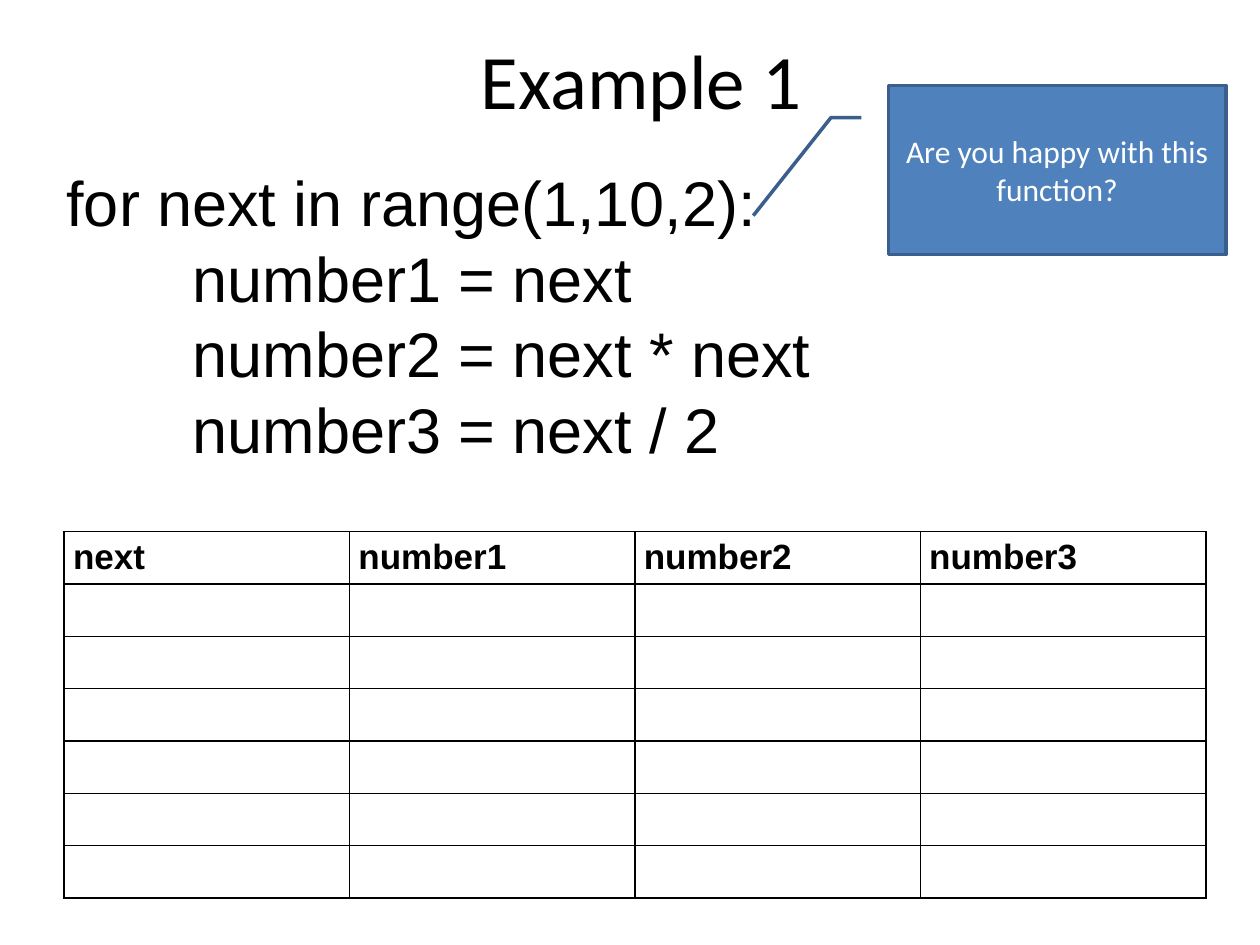
from dataclasses import dataclass

from lxml import etree
from pptx import Presentation
from pptx.dml.color import RGBColor as RGB
from pptx.enum.shapes import MSO_SHAPE as Shape
from pptx.enum.text import MSO_ANCHOR as Anchor, PP_ALIGN as Align
from pptx.oxml.ns import qn
from pptx.util import Inches, Pt


@dataclass(frozen=True)
class Theme:
    black: str = "000000"
    white: str = "FFFFFF"
    blue: str = "4F81BD"
    edge: str = "3A5F8C"
    sans: str = "Calibri"
    mono: str = "Arial"
    title: int = 44
    code: int = 36
    head: int = 20
    note: int = 18


class Page:
    def __init__(self, deck, theme):
        self.theme = theme
        self.slide = deck.slides.add_slide(deck.slide_layouts[6])

    def style(self, frame, face, size, color, align=Align.LEFT, bold=False):
        for para in frame.paragraphs:
            para.alignment = align
            for run in para.runs:
                font = run.font
                font.name, font.size, font.bold = face, Pt(size), bold
                font.color.rgb = RGB.from_string(color)

    def text(self, box, words, face, size, align, anchor, wrap=True):
        frame = self.slide.shapes.add_textbox(*map(Inches, box)).text_frame
        frame.text = words
        frame.word_wrap = wrap
        frame.vertical_anchor = anchor
        self.style(frame, face, size, self.theme.black, align)
        return frame

    def tab(self, frame, stop):
        for para in frame.paragraphs:
            tabs = etree.SubElement(para._p.get_or_add_pPr(), qn("a:tabLst"))
            etree.SubElement(tabs, qn("a:tab"), pos=str(Inches(stop)), algn="l")

    def callout(self, box, words, bends):
        t = self.theme
        shape = self.slide.shapes.add_shape(Shape.LINE_CALLOUT_2, *map(Inches, box))
        for i, bend in enumerate(bends):
            shape.adjustments[i] = bend
        shape.shadow.inherit = False
        shape.fill.solid()
        shape.fill.fore_color.rgb = RGB.from_string(t.blue)
        shape.line.color.rgb = RGB.from_string(t.edge)
        shape.line.width = Pt(2)
        frame = shape.text_frame
        frame.text = words
        frame.word_wrap = True
        frame.vertical_anchor = Anchor.MIDDLE
        self.style(frame, t.sans, t.note, t.white, Align.CENTER)

    def border(self, cell):
        props = cell._tc.get_or_add_tcPr()
        for side in ("lnL", "lnR", "lnT", "lnB"):
            line = etree.SubElement(props, qn(f"a:{side}"), w=str(Pt(1)))
            fill = etree.SubElement(line, qn("a:solidFill"))
            etree.SubElement(fill, qn("a:srgbClr"), val=self.theme.black)

    def table(self, box, heads, rows):
        t = self.theme
        grid = self.slide.shapes.add_table(rows, len(heads), *map(Inches, box)).table
        grid.first_row = grid.horz_banding = False
        for cell in grid.iter_cells():
            self.border(cell)
            cell.fill.background()
            cell.margin_left = cell.margin_right = Inches(0.07)
            cell.margin_top = cell.margin_bottom = 0
        for cell, head in zip(grid.rows[0].cells, heads):
            frame = cell.text_frame
            frame.text = head
            para = frame.paragraphs[0]
            para.line_spacing = 1.15
            para.space_before = para.space_after = Pt(6)
            self.style(frame, t.mono, t.head, t.black, bold=True)


def main():
    deck = Presentation()
    deck.slide_width, deck.slide_height = Inches(10), Inches(7.5)
    theme = Theme()
    page = Page(deck, theme)

    # Title
    page.text((0.59, 0, 9, 1.25), "Example 1", theme.sans, theme.title,
              Align.CENTER, Anchor.MIDDLE)

    # Trace table
    page.table((0.51, 4.22, 9.06, 2.91),
               ("next", "number1", "number2", "number3"), 7)

    # Code, indented by a tab stop
    code = (
        "for next in range(1,10,2):",
        "\tnumber1 = next",
        "\tnumber2 = next * next",
        "\tnumber3 = next / 2",
    )
    frame = page.text((0.43, 1.25, 6.16, 2.5), "\n".join(code), theme.mono,
                      theme.code, Align.LEFT, Anchor.TOP, wrap=False)
    page.tab(frame, 1)

    # Question
    page.callout((7.05, 0.68, 2.68, 1.34), "Are you happy with this function?",
                 (0.19, -0.08, 0.19, -0.17, 0.77, -0.4))

    deck.save("out.pptx")


if __name__ == "__main__":
    main()
